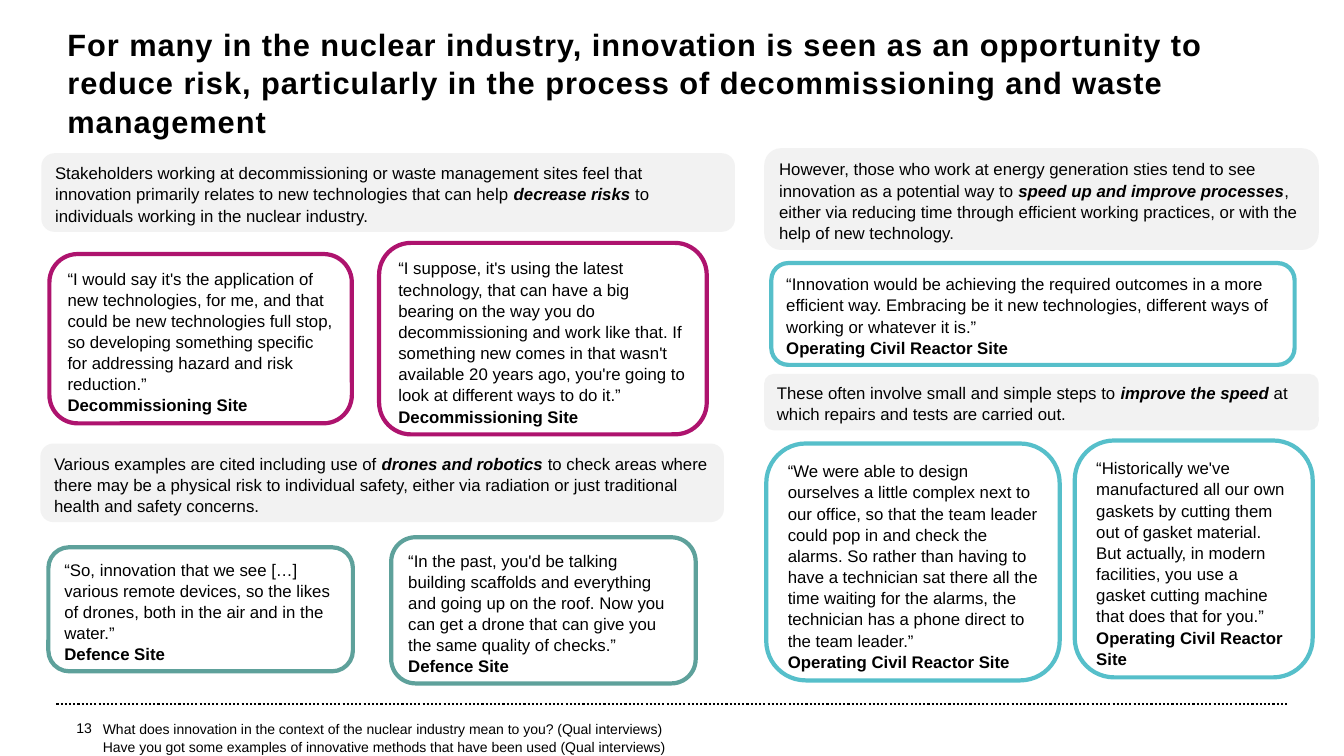
from lxml import etree
from pptx import Presentation
from pptx.dml.color import RGBColor
from pptx.enum.dml import MSO_LINE
from pptx.enum.shapes import MSO_CONNECTOR, MSO_SHAPE
from pptx.enum.text import MSO_ANCHOR, PP_ALIGN
from pptx.oxml.ns import qn
from pptx.util import Inches, Pt

ROUNDED = MSO_SHAPE.ROUNDED_RECTANGLE
STRAIGHT = MSO_CONNECTOR.STRAIGHT
DOTTED = MSO_LINE.ROUND_DOT
TOP, MIDDLE = MSO_ANCHOR.TOP, MSO_ANCHOR.MIDDLE
LEFT, CENTRE = PP_ALIGN.LEFT, PP_ALIGN.CENTER

COLOURS = {
    "text": "000000",
    "statement": "F2F2F2",
    "decommissioning": "AE136E",
    "defence": "5EA19B",
    "reactor": "56BFCA",
}
SITES = {
    "decommissioning": "Decommissioning Site",
    "defence": "Defence Site",
    "reactor": "Operating Civil Reactor Site",
}

TITLE = ("For many in the nuclear industry, innovation is seen as an opportunity to reduce risk, "
         "particularly in the process of decommissioning and waste management")
QUESTIONS = [
    "What does innovation in the context of the nuclear industry mean to you? (Qual interviews)",
    "Have you got some examples of innovative methods that have been used (Qual interviews)",
]

RISK_STATEMENTS = [
    ((0.01, 0.05, 6.88, 0.78),
     "Stakeholders working at decommissioning or waste management sites feel that innovation "
     "primarily relates to new technologies that can help ",
     "decrease risks ", "to individuals working in the nuclear industry."),
    ((0, 2.93, 6.78, 0.78),
     "Various examples are cited including use of ", "drones and robotics ",
     "to check areas where there may be a physical risk to individual safety, either via "
     "radiation or just traditional health and safety concerns."),
]
RISK_QUOTES = [
    ((0.09, 1.05, 3, 1.68), "decommissioning",
     "“I would say it's the application of new technologies, for me, and that could be new "
     "technologies full stop, so developing something specific for addressing hazard and risk "
     "reduction.”"),
    ((3.36, 0.94, 3.25, 1.9), "decommissioning",
     "“I suppose, it's using the latest technology, that can have a big bearing on the way you "
     "do decommissioning and work like that. If something new comes in that wasn't available "
     "20 years ago, you're going to look at different ways to do it.”"),
    ((0.08, 3.96, 3.02, 1.23), "defence",
     "“So, innovation that we see […] various remote devices, so the likes of drones, both in "
     "the air and in the water.”"),
    ((3.48, 3.86, 3.02, 1.45), "defence",
     "“In the past, you'd be talking building scaffolds and everything and going up on the "
     "roof. Now you can get a drone that can give you the same quality of checks.”"),
]
SPEED_STATEMENTS = [
    ((0, 0, 5.5, 1.01),
     "However, those who work at energy generation sties tend to see innovation as a potential "
     "way to ", "speed up and improve processes",
     ", either via reducing time through efficient working practices, or with the help of new "
     "technology."),
    ((0, 2.24, 5.5, 0.56),
     "These often involve small and simple steps to ", "improve the speed ",
     "at which repairs and tests are carried out."),
]
SPEED_QUOTES = [
    ((0.07, 1.14, 5.19, 1.01), "reactor",
     "“Innovation would be achieving the required outcomes in a more efficient way. Embracing "
     "be it new technologies, different ways of working or whatever it is.”"),
    ((0.02, 2.93, 2.91, 2.35), "reactor",
     "“We were able to design ourselves a little complex next to our office, so that the team "
     "leader could pop in and check the alarms. So rather than having to have a technician sat "
     "there all the time waiting for the alarms, the technician has a phone direct to the team "
     "leader.”"),
    ((3.08, 2.9, 2.36, 2.35), "reactor",
     "“Historically we've manufactured all our own gaskets by cutting them out of gasket "
     "material. But actually, in modern facilities, you use a gasket cutting machine that does "
     "that for you.”"),
]


def colour(name):
    """Return the named colour."""
    return RGBColor.from_string(COLOURS[name])


def inches(box):
    """Turn a box of numbers into lengths."""
    return [Inches(value) for value in box]


def write(paragraph, text, size=12, bold=False, italic=False, align=LEFT, tracking=None):
    """Add one formatted run to a paragraph."""
    paragraph.alignment = align
    paragraph.line_spacing = 1.05
    run = paragraph.add_run()
    run.text = text
    run.font.name = "Arial"
    run.font.size = Pt(size)
    run.font.bold = bold
    run.font.italic = italic
    run.font.color.rgb = colour("text")
    if tracking:
        run.font._element.set("spc", str(tracking))


def add_text_box(slide, box, anchor=TOP):
    """Add a wrapping text box and return its frame."""
    frame = slide.shapes.add_textbox(*inches(box)).text_frame
    frame.word_wrap = True
    frame.vertical_anchor = anchor
    return frame


def add_panel(slide, box, fill=None, outline=None):
    """Add a rounded panel and return its frame."""
    panel = slide.shapes.add_shape(ROUNDED, *inches(box))
    panel.shadow.inherit = False
    if fill:
        panel.fill.solid()
        panel.fill.fore_color.rgb = colour(fill)
    else:
        panel.fill.background()
    if outline:
        panel.line.color.rgb = colour(outline)
        panel.line.width = Pt(3)
    else:
        panel.line.fill.background()
    panel.text_frame.word_wrap = True
    panel.text_frame.vertical_anchor = TOP
    return panel.text_frame


def add_heading(slide, box):
    """Add the slide title."""
    heading = add_text_box(slide, box, MIDDLE)
    write(heading.paragraphs[0], TITLE, size=22, bold=True, tracking=70)


def add_column(slide, box, statements, quotes):
    """Place grey statements and outlined quotes within a column box."""
    left, top = box[:2]
    for (x, y, width, height), before, emphasis, after in statements:
        statement = add_panel(slide, (left + x, top + y, width, height), fill="statement")
        paragraph = statement.paragraphs[0]
        write(paragraph, before)
        write(paragraph, emphasis, bold=True, italic=True)
        write(paragraph, after)
    for (x, y, width, height), site, words in quotes:
        quote = add_panel(slide, (left + x, top + y, width, height), outline=site)
        write(quote.paragraphs[0], words)
        write(quote.add_paragraph(), SITES[site], bold=True)


def add_footer(slide, box):
    """Add the dotted rule, the page number and the survey questions."""
    left, top, width, height = box
    rule = slide.shapes.add_connector(STRAIGHT, *inches((left, top, left + width, top)))
    rule.line.color.rgb = colour("text")
    rule.line.width = Pt(1.5)
    rule.line.dash_style = DOTTED
    etree.SubElement(rule._element.spPr, qn("a:effectLst"))

    questions = add_text_box(slide, (left + 0.46, top + 0.16, width - 1.1, height - 0.16))
    questions.margin_left = questions.margin_right = 0
    questions.margin_top = questions.margin_bottom = 0
    write(questions.paragraphs[0], QUESTIONS[0], size=10)
    write(questions.add_paragraph(), QUESTIONS[1], size=10)

    page_number = add_text_box(slide, (left, top + 0.12, 0.55, 0.23), MIDDLE)
    write(page_number.paragraphs[0], "13", size=10, align=CENTRE)


def main():
    """Build and save the slide."""
    deck = Presentation()
    deck.slide_width, deck.slide_height = Inches(13.33), Inches(7.5)
    slide = deck.slides.add_slide(deck.slide_layouts[6])
    add_heading(slide, (0.57, 0.44, 11.81, 0.74))
    add_column(slide, (0.4, 1.47, 6.89, 5.31), RISK_STATEMENTS, RISK_QUOTES)
    add_column(slide, (7.58, 1.47, 5.5, 5.28), SPEED_STATEMENTS, SPEED_QUOTES)
    add_footer(slide, (0.56, 6.98, 12.21, 0.58))
    deck.save("out.pptx")


if __name__ == "__main__":
    main()
